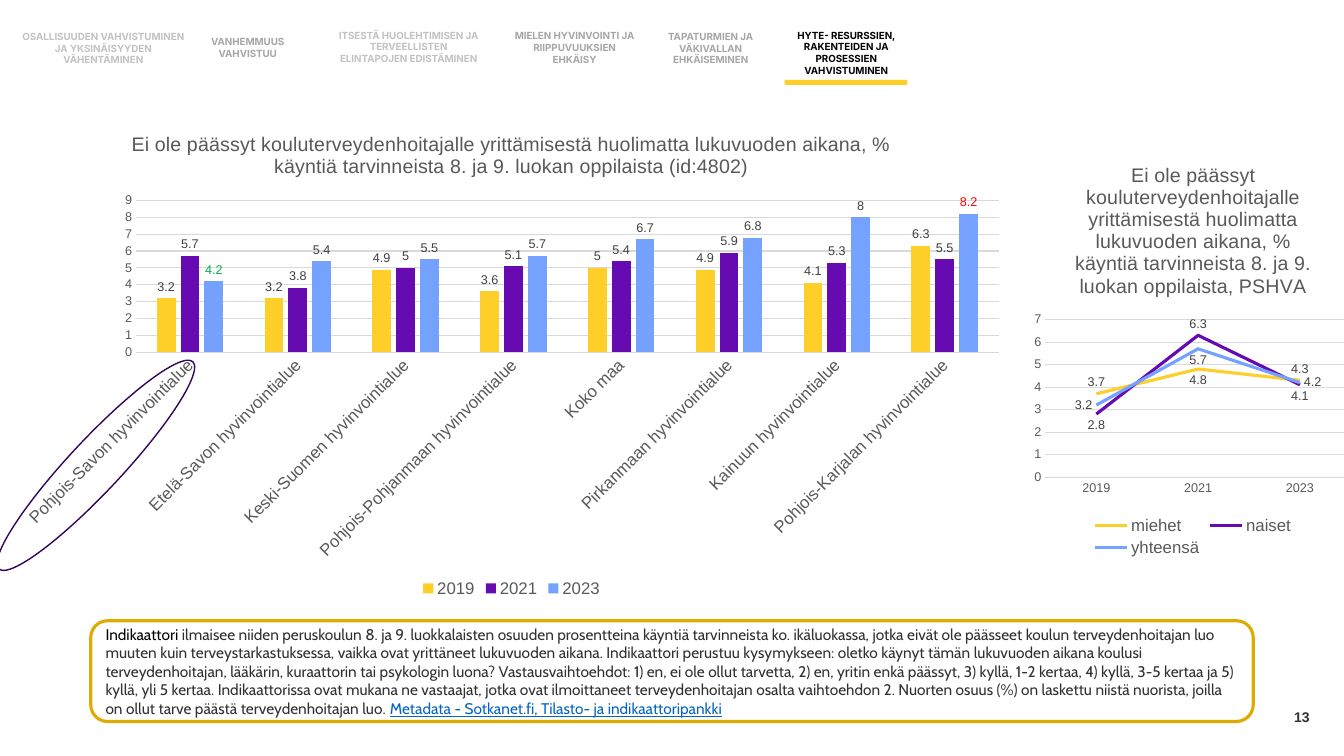
import pptx
import pptx.chart.data
import pptx.dml.color
import pptx.enum.chart
import pptx.enum.shapes
import pptx.enum.text
import pptx.oxml
import pptx.oxml.ns
import pptx.util

RGBColor = pptx.dml.color.RGBColor
YELLOW = RGBColor(0xFF, 0xCF, 0x29)
PURPLE = RGBColor(0x66, 0x0A, 0xB2)
BLUE = RGBColor(0x75, 0xA1, 0xFF)
GOLD = RGBColor(0xDE, 0xAC, 0x00)
DARK_PURPLE = RGBColor(0x33, 0x05, 0x59)
LINK_BLUE = RGBColor(0x05, 0x63, 0xC1)
GREEN = RGBColor(0x00, 0xB0, 0x50)
RED = RGBColor(0xFF, 0x00, 0x00)
BLACK = RGBColor(0x00, 0x00, 0x00)
INK = RGBColor(0x30, 0x30, 0x30)
LABEL_GREY = RGBColor(0x40, 0x40, 0x40)
AXIS_GREY = RGBColor(0x59, 0x59, 0x59)
TAB_GREY = RGBColor(0xA6, 0xA6, 0xA6)
PALE_GREY = RGBColor(0xC2, 0xC2, 0xC2)
GRID_GREY = RGBColor(0xD9, 0xD9, 0xD9)

Position = pptx.enum.chart.XL_LABEL_POSITION
ChartType = pptx.enum.chart.XL_CHART_TYPE
Shape = pptx.enum.shapes.MSO_SHAPE
Align = pptx.enum.text.PP_ALIGN
MIDDLE = pptx.enum.text.MSO_ANCHOR.MIDDLE

deck = pptx.Presentation()
deck.slide_width = pptx.util.Inches(13.33)
deck.slide_height = pptx.util.Inches(7.5)
page = deck.slides.add_slide(deck.slide_layouts[6])
COLUMN = deck.slide_width / 160
ROW = deck.slide_height / 90


def grid(left, top, width, height):
    """Turn columns and rows of a 160 by 90 grid into slide lengths."""
    return [round(left * COLUMN), round(top * ROW), round(width * COLUMN), round(height * ROW)]


def style(font, size, color, name="Arial", bold=False):
    font.size = pptx.util.Pt(size)
    font.color.rgb = color
    font.name = name
    font.bold = bold


# Section tabs and page number
small_texts = [
    ((2.6, 4.3, 19.4, 2.9), ["OSALLISUUDEN VAHVISTUMINEN JA YKSINÄISYYDEN VÄHENTÄMINEN"],
     Align.CENTER, 7, PALE_GREY, "Inter"),
    ((22.2, 5, 14.6, 1.4), ["VANHEMMUUS VAHVISTUU"], Align.CENTER, 7, TAB_GREY, "Inter"),
    ((40.2, 3.5, 16.9, 4.2), ["ITSESTÄ HUOLEHTIMISEN JA TERVEELLISTEN ELINTAPOJEN EDISTÄMINEN"],
     Align.CENTER, 7, PALE_GREY, "Inter"),
    ((60.8, 4.2, 15.2, 2.9), ["MIELEN HYVINVOINTI JA RIIPPUVUUKSIEN EHKÄISY"],
     Align.CENTER, 7, TAB_GREY, "Inter"),
    ((77, 4.3, 15.2, 2.9), ["TAPATURMIEN JA VÄKIVALLAN EHKÄISEMINEN"],
     Align.CENTER, 7, TAB_GREY, "Inter"),
    ((92.3, 4.2, 16.9, 4.2), ["HYTE- RESURSSIEN, RAKENTEIDEN JA PROSESSIEN", "VAHVISTUMINEN"],
     Align.CENTER, 7, BLACK, "Inter"),
    ((119.9, 82.9, 36, 4.8), ["13"], Align.RIGHT, 10, INK, "Arial"),
]
for place, lines, align, size, color, name in small_texts:
    frame = page.shapes.add_textbox(*grid(*place)).text_frame
    frame.word_wrap = True
    frame.vertical_anchor = MIDDLE
    frame.margin_left = frame.margin_right = frame.margin_top = frame.margin_bottom = 0
    for index, line in enumerate(lines):
        para = frame.add_paragraph() if index else frame.paragraphs[0]
        para.alignment = align
        span = para.add_run()
        span.text = line
        style(span.font, size, color, name, bold=True)

active_bar = page.shapes.add_shape(Shape.RECTANGLE, *grid(93.4, 9.5, 14.6, 0.6))
active_bar.shadow.inherit = False
active_bar.fill.solid()
active_bar.fill.fore_color.rgb = YELLOW
active_bar.line.fill.background()

# Indicator description
note = page.shapes.add_shape(Shape.ROUNDED_RECTANGLE, *grid(10.8, 73.9, 138.4, 12))
note.shadow.inherit = False
note.fill.background()
note.line.color.rgb = GOLD
note.line.width = pptx.util.Pt(2.25)
note.text_frame.word_wrap = True
note.text_frame.vertical_anchor = MIDDLE
para = note.text_frame.paragraphs[0]
para.alignment = Align.LEFT
description = (
    "ilmaisee niiden peruskoulun 8. ja 9. luokkalaisten osuuden prosentteina käyntiä tarvinneista "
    "ko. ikäluokassa, jotka eivät ole päässeet koulun terveydenhoitajan luo muuten kuin "
    "terveystarkastuksessa, vaikka ovat yrittäneet lukuvuoden aikana. Indikaattori perustuu "
    "kysymykseen: oletko käynyt tämän lukuvuoden aikana koulusi terveydenhoitajan, lääkärin, "
    "kuraattorin tai psykologin luona? Vastausvaihtoehdot: 1) en, ei ole ollut tarvetta, 2) en, "
    "yritin enkä päässyt, 3) kyllä, 1-2 kertaa, 4) kyllä, 3-5 kertaa ja 5) kyllä, yli 5 kertaa. "
    "Indikaattorissa ovat mukana ne vastaajat, jotka ovat ilmoittaneet terveydenhoitajan osalta "
    "vaihtoehdon 2. Nuorten osuus (%) on laskettu niistä nuorista, joilla on ollut tarve päästä "
    "terveydenhoitajan luo. ")
for text, color in [("Indikaattori ", BLACK), (description, INK),
                    ("Metadata - Sotkanet.fi, Tilasto- ja indikaattoripankki", LINK_BLUE)]:
    span = para.add_run()
    span.text = text
    style(span.font, 11, color, "Cabin")
    span.font.underline = color == LINK_BLUE

# Charts: special labels are (series, point): (position, colour)
question = ("Ei ole päässyt kouluterveydenhoitajalle yrittämisestä huolimatta lukuvuoden aikana, "
            "% käyntiä tarvinneista 8. ja 9. luokan oppilaista")
regions = [name + " hyvinvointialue" for name in (
    "Pohjois-Savon", "Etelä-Savon", "Keski-Suomen", "Pohjois-Pohjanmaan",
    "Pirkanmaan", "Kainuun", "Pohjois-Karjalan")]
regions.insert(4, "Koko maa")
charts = [
    dict(kind=ChartType.COLUMN_CLUSTERED, place=(0.5, 13.4, 120.8, 58.2),
         title=question + " (id:4802)", categories=regions, category_size=12, top=9,
         plot_share=(0.13, 0.18, 0.85, 0.31), label_position=Position.OUTSIDE_END,
         series={"2019": [3.2, 3.2, 4.9, 3.6, 5, 4.9, 4.1, 6.3],
                 "2021": [5.7, 3.8, 5, 5.1, 5.4, 5.9, 5.3, 5.5],
                 "2023": [4.2, 5.4, 5.5, 5.7, 6.7, 6.8, 8, 8.2]},
         special={(2, 0): (Position.OUTSIDE_END, GREEN), (2, 7): (Position.OUTSIDE_END, RED)}),
    dict(kind=ChartType.LINE, place=(122.5, 17.3, 39.1, 49.4),
         title=question + ", PSHVA", categories=["2019", "2021", "2023"], category_size=9, top=7,
         plot_share=(0.05, 0.42, 0.93, 0.38), label_position=Position.ABOVE,
         series={"miehet": [3.7, 4.8, 4.3], "naiset": [2.8, 6.3, 4.1],
                 "yhteensä": [3.2, 5.7, 4.2]},
         special={(0, 1): (Position.BELOW, LABEL_GREY), (1, 0): (Position.BELOW, LABEL_GREY),
                  (1, 2): (Position.BELOW, LABEL_GREY), (2, 0): (Position.LEFT, LABEL_GREY),
                  (2, 1): (Position.BELOW, LABEL_GREY), (2, 2): (Position.RIGHT, LABEL_GREY)}),
]
for plan in charts:
    data = pptx.chart.data.CategoryChartData()
    data.categories = plan["categories"]
    for name, values in plan["series"].items():
        data.add_series(name, values)
    chart = page.shapes.add_chart(plan["kind"], *grid(*plan["place"]), data).chart
    style(chart.font, 10, BLACK)

    chart.has_title = True
    span = chart.chart_title.text_frame.paragraphs[0].add_run()
    span.text = plan["title"]
    style(span.font, 14, AXIS_GREY)
    chart.chart_title.include_in_layout = False
    chart.has_legend = True
    chart.legend.position = pptx.enum.chart.XL_LEGEND_POSITION.BOTTOM
    chart.legend.include_in_layout = False
    style(chart.legend.font, 12, AXIS_GREY)

    for axis, size in [(chart.category_axis, plan["category_size"]), (chart.value_axis, 9)]:
        axis.major_tick_mark = axis.minor_tick_mark = pptx.enum.chart.XL_TICK_MARK.NONE
        style(axis.tick_labels.font, size, AXIS_GREY)
    chart.category_axis.format.line.color.rgb = GRID_GREY
    value_axis = chart.value_axis
    value_axis.format.line.fill.background()
    value_axis.minimum_scale, value_axis.maximum_scale, value_axis.major_unit = 0, plan["top"], 1
    value_axis.major_gridlines.format.line.color.rgb = GRID_GREY
    value_axis.major_gridlines.format.line.width = pptx.util.Pt(0.75)

    plot = chart.plots[0]
    plot.vary_by_categories = False
    is_column = plan["kind"] == ChartType.COLUMN_CLUSTERED
    if is_column:
        plot.gap_width, plot.overlap = 219, -27
        for body in chart.category_axis._element.xpath("c:txPr/a:bodyPr"):
            body.set("rot", "-2700000")
    for series, color in zip(plot.series, (YELLOW, PURPLE, BLUE)):
        if is_column:
            series.format.fill.solid()
            series.format.fill.fore_color.rgb = color
        else:
            series.smooth = False
            series.marker.style = pptx.enum.chart.XL_MARKER_STYLE.NONE
            series.format.line.color.rgb = color
            series.format.line.width = pptx.util.Pt(2.25)
        series.data_labels.show_value = True
        series.data_labels.position = plan["label_position"]
        style(series.data_labels.font, 9, LABEL_GREY)
    for (row, point), (position, color) in plan["special"].items():
        label = plot.series[row].points[point].data_label
        style(label.font, 9, color)
        label.position = position

    plot_area = chart._chartSpace.xpath("c:chart/c:plotArea")[0]
    for old_layout in plot_area.xpath("c:layout"):
        plot_area.remove(old_layout)
    shares = "".join(f'<c:{key} val="{share}"/>' for key, share in zip("xywh", plan["plot_share"]))
    plot_area.insert(0, pptx.oxml.parse_xml(
        f'<c:layout {pptx.oxml.ns.nsdecls("c")}><c:manualLayout><c:layoutTarget val="inner"/>'
        f'<c:xMode val="edge"/><c:yMode val="edge"/>{shares}</c:manualLayout></c:layout>'))

# Ring around the highlighted region
ring = page.shapes.add_shape(Shape.OVAL, *grid(8.3, 38.5, 6.2, 33.8))
ring.shadow.inherit = False
ring.rotation = 43.1
ring.fill.background()
ring.line.color.rgb = DARK_PURPLE
ring.line.width = pptx.util.Pt(1)

deck.save("out.pptx")
